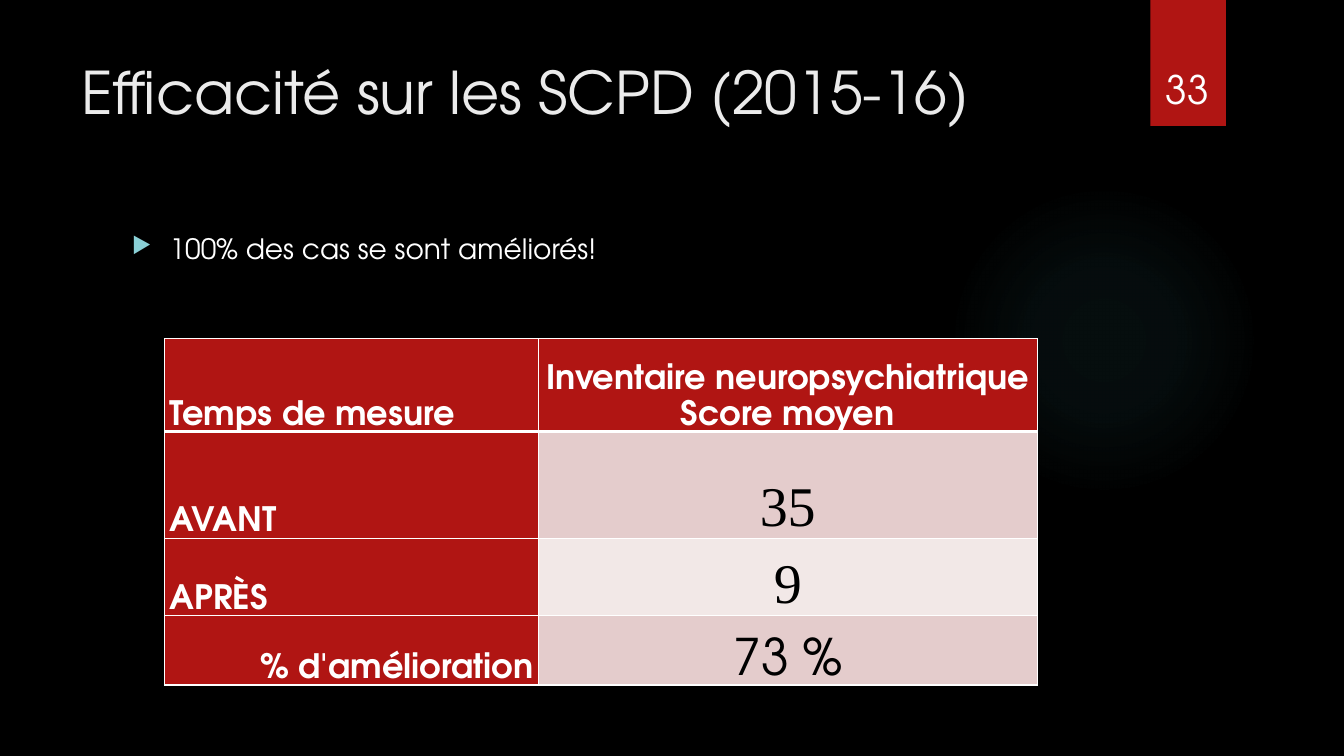
from lxml import etree
from pptx import Presentation
from pptx.dml.color import RGBColor
from pptx.enum.shapes import MSO_SHAPE
from pptx.enum.text import MSO_ANCHOR, PP_ALIGN
from pptx.oxml import parse_xml
from pptx.oxml.ns import nsdecls, qn
from pptx.util import Pt

LEFT, CENTER, RIGHT = PP_ALIGN.LEFT, PP_ALIGN.CENTER, PP_ALIGN.RIGHT
TOP, BOTTOM = MSO_ANCHOR.TOP, MSO_ANCHOR.BOTTOM
RECTANGLE, OVAL = MSO_SHAPE.RECTANGLE, MSO_SHAPE.OVAL

SANS, SERIF = "TeX Gyre Adventor", "Times New Roman"
BLACK, WHITE, RED = "000000", "FFFFFF", "B01513"
TITLE_COLOR, BULLET_COLOR, GLOW_COLOR = "EBEBEB", "8AD0D6", "50B9C1"
BANDS = ["E4CCCC", "F2E8E7"]

TITLE = "Efficacité sur les SCPD (2015-16)"
BULLET = "100% des cas se sont améliorés!"
PAGE_NUMBER = "33"
HEADER = ("Temps de mesure", "Inventaire neuropsychiatrique Score moyen")
SCORES = [
    ("AVANT", LEFT, "35", SERIF, 40),
    ("APRÈS", LEFT, "9", SERIF, 40),
    ("% d'amélioration", RIGHT, "73 %", SANS, 36),
]

GLOW_STOPS = [(0, 7), (36, 6), (69, 0)]
TABLE_LEFT, TABLE_TOP = 117.4, 241.9
COLUMN_WIDTHS = [267.1, 356.4]
ROW_HEIGHTS = [54.7, 76.3, 50.4, 49.7]
BULLET_INDENT = 27


def rgb(color):
    return RGBColor.from_string(color)


def write_text(frame, text, size, color=WHITE, font=SANS, bold=False,
               align=LEFT, spacing=None, after=None):
    frame.word_wrap = True
    paragraph = frame.paragraphs[0]
    paragraph.alignment = align
    if spacing:
        paragraph.line_spacing = spacing
    if after:
        paragraph.space_after = Pt(after)
    run = paragraph.add_run()
    run.text = text
    run.font.size = Pt(size)
    run.font.name = font
    run.font.bold = bold
    run.font.color.rgb = rgb(color)
    return paragraph


def add_text_box(slide, box, text, size, anchor=TOP, **text_format):
    frame = slide.shapes.add_textbox(*map(Pt, box)).text_frame
    frame.vertical_anchor = anchor
    return write_text(frame, text, size, **text_format)


def add_plain_shape(slide, kind, box, color):
    shape = slide.shapes.add_shape(kind, *map(Pt, box))
    shape.shadow.inherit = False
    shape.line.fill.background()
    shape.fill.solid()
    shape.fill.fore_color.rgb = rgb(color)
    return shape


def apply_glow(shape):
    stops = "".join(
        f'<a:gs pos="{position * 1000}"><a:srgbClr val="{GLOW_COLOR}">'
        f'<a:alpha val="{opacity * 1000}"/></a:srgbClr></a:gs>'
        for position, opacity in GLOW_STOPS)
    gradient = parse_xml(
        f'<a:gradFill {nsdecls("a")} rotWithShape="1"><a:gsLst>{stops}</a:gsLst>'
        '<a:path path="circle"><a:fillToRect l="50000" t="50000" r="50000" b="50000"/>'
        '</a:path></a:gradFill>')
    properties = shape._element.spPr
    properties.replace(properties.find(qn("a:solidFill")), gradient)


def add_bullet(paragraph):
    properties = paragraph._p.get_or_add_pPr()
    properties.set("marL", str(Pt(BULLET_INDENT)))
    properties.set("indent", str(-Pt(BULLET_INDENT)))
    color = etree.SubElement(properties, qn("a:buClr"))
    etree.SubElement(color, qn("a:srgbClr"), val=BULLET_COLOR)
    etree.SubElement(properties, qn("a:buSzPct"), val="80000")
    etree.SubElement(properties, qn("a:buChar"), char="▶")


def set_borders(cell, top, bottom):
    properties = cell._tc.get_or_add_tcPr()
    widths = {"lnL": 1, "lnR": 1, "lnT": top, "lnB": bottom}
    for index, (side, width) in enumerate(widths.items()):
        properties.insert(index, parse_xml(
            f'<a:{side} {nsdecls("a")} w="{Pt(width)}"><a:solidFill>'
            f'<a:srgbClr val="{WHITE}"/></a:solidFill></a:{side}>'))


def fill_cell(table, row, column, text, size, fill, **text_format):
    cell = table.cell(row, column)
    cell.vertical_anchor = BOTTOM
    cell.margin_left = cell.margin_right = Pt(3.6)
    cell.margin_top = cell.margin_bottom = 0
    cell.fill.solid()
    cell.fill.fore_color.rgb = rgb(fill)
    set_borders(cell, top=3 if row == 1 else 1, bottom=3 if row == 0 else 1)
    write_text(cell.text_frame, text, size, **text_format)


def add_score_table(slide):
    table = slide.shapes.add_table(
        len(ROW_HEIGHTS), len(COLUMN_WIDTHS), Pt(TABLE_LEFT), Pt(TABLE_TOP),
        Pt(sum(COLUMN_WIDTHS)), Pt(sum(ROW_HEIGHTS))).table
    for column, width in zip(table.columns, COLUMN_WIDTHS):
        column.width = Pt(width)
    for row, height in zip(table.rows, ROW_HEIGHTS):
        row.height = Pt(height)

    label = {"size": 24, "fill": RED, "bold": True}
    body = {"spacing": 1.15, "after": 2}
    fill_cell(table, 0, 0, HEADER[0], spacing=1.07, **label)
    fill_cell(table, 0, 1, HEADER[1], align=CENTER, **label, **body)
    for row, (name, align, score, font, size) in enumerate(SCORES, start=1):
        fill_cell(table, row, 0, name, align=align, **label, **body)
        fill_cell(table, row, 1, score, size, BANDS[(row - 1) % 2],
                  color=BLACK, font=font, align=CENTER, **body)


def main():
    presentation = Presentation()
    presentation.slide_width, presentation.slide_height = Pt(960), Pt(540)
    slide = presentation.slides.add_slide(presentation.slide_layouts[6])
    slide.background.fill.solid()
    slide.background.fill.fore_color.rgb = rgb(BLACK)

    apply_glow(add_plain_shape(slide, OVAL, (677.5, 131.8, 221.8, 221.8), GLOW_COLOR))
    add_plain_shape(slide, RECTANGLE, (821.7, 0, 54, 90), RED)
    add_text_box(slide, (51.1, 36, 740.9, 110.2), TITLE, 42, color=TITLE_COLOR)
    add_bullet(add_text_box(slide, (87.1, 162, 704.2, 330.5), BULLET, 20))
    add_text_box(slide, (815, 23, 66.2, 60.5), PAGE_NUMBER, 28, anchor=BOTTOM, align=CENTER)
    add_score_table(slide)
    presentation.save("out.pptx")


if __name__ == "__main__":
    main()
